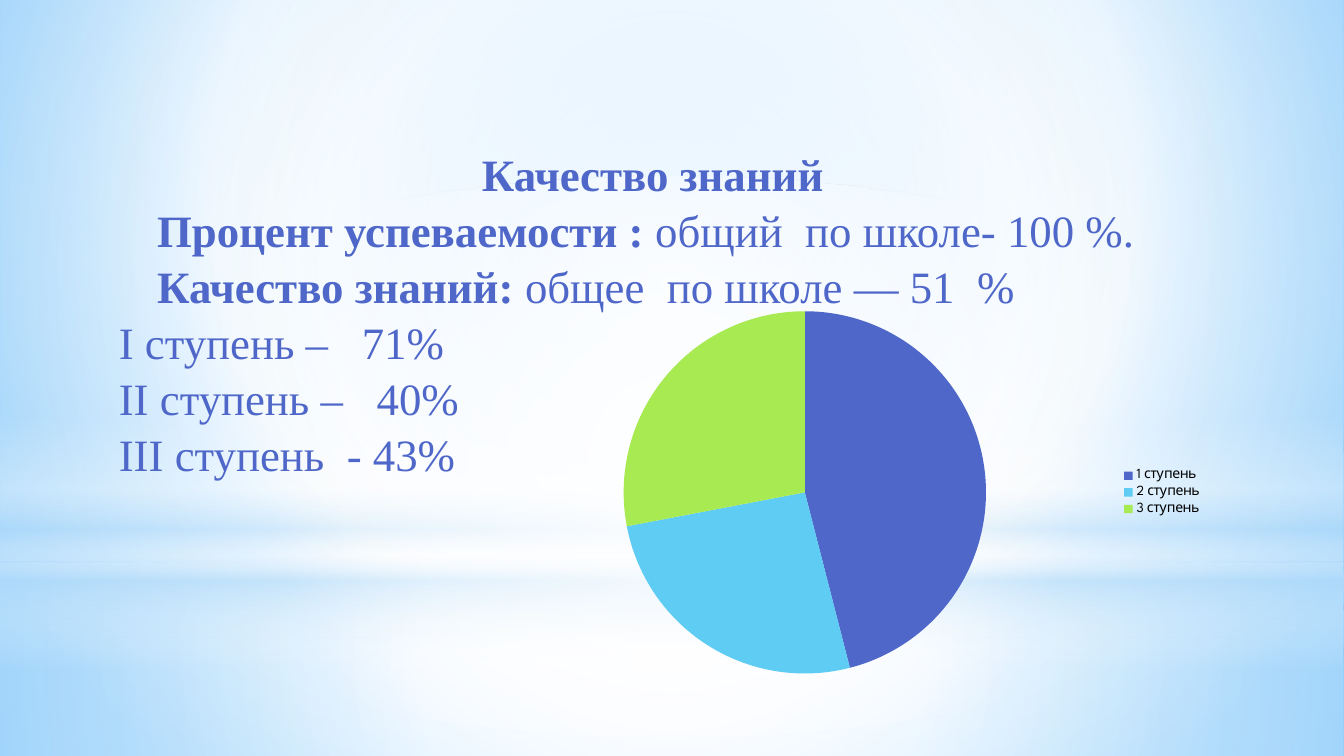
from lxml import etree
from pptx import Presentation
from pptx import util as u
from pptx.chart.data import CategoryChartData
from pptx.dml.color import RGBColor
from pptx.enum import chart as ch, shapes, text
from pptx.oxml.ns import qn

THEME = {
    "ink": "4E67C8", "black": "000000",
    "slices": ["4E67C8", "5ECCF3", "A7EA52"],
    "white": "FFFFFF", "mist": "B4DCFA", "sky": "9ED5FF", "deep": "5BB9FF",
    "face": "Times New Roman", "size": 32,
    "label": "League Spartan", "small": 10,
}

MID = (50, 50, 50, 50)
BACK = ([(0, "sky", 100), (60, "white", 100), (100, "deep", 100)], (20, 10, 20, 60))
RECT, OVAL = shapes.MSO_SHAPE.RECTANGLE, shapes.MSO_SHAPE.OVAL
GLOWS = [
    (RECT, 5.58, 1.92, [(0, "white", 91), (37, "white", 76), (100, "mist", 79)], MID),
    (RECT, 0, 5.58, [(0, "white", 89), (48, "white", 62), (100, "mist", 79)], MID),
    (RECT, 4.12, 2.5, [(0, "white", 0), (29, "white", 30), (45, "mist", 40),
                       (55, "white", 26), (65, "mist", 60), (100, "white", 0)], None),
    (OVAL, 1.75, 5.58, [(0, "white", 100), (56, "white", 0)], MID),
]

LEFT, MID_AL = text.PP_ALIGN.LEFT, text.PP_ALIGN.CENTER
LINES = [
    (MID_AL, 0, [("Качество знаний", True)]),
    (LEFT, 0.38, [("Процент успеваемости : ", True), ("общий  по школе- 100 %.\u00a0", False)]),
    (LEFT, 0.38, [("Качество знаний: ", True), ("общее  по школе — 51  %", False)]),
    (LEFT, 0, [("I ступень –   71%", False)]),
    (LEFT, 0, [("II ступень –   40%", False)]),
    (LEFT, 0, [("ІІІ ступень  - 43%", False)]),
]
SHARES = {"1 ступень": 46, "2 ступень": 26, "3 ступень": 28}
WIDE, HIGH = 13.33, 7.5


def box(*nums):
    return [u.Inches(n) for n in nums]


def shade(fill, root, stops, focus):
    fill.gradient()
    grad = next(root.iter(qn("a:gradFill")))
    for kid in list(grad):
        grad.remove(kid)
    group = etree.SubElement(grad, qn("a:gsLst"))
    for pos, name, alpha in stops:
        stop = etree.SubElement(group, qn("a:gs"), pos=str(pos * 1000))
        tone = etree.SubElement(stop, qn("a:srgbClr"), val=THEME[name])
        if alpha < 100:
            etree.SubElement(tone, qn("a:alpha"), val=str(alpha * 1000))
    if focus:
        way = etree.SubElement(grad, qn("a:path"), {"path": "circle"})
        sides = {k: str(v * 1000) for k, v in zip("ltrb", focus)}
        etree.SubElement(way, qn("a:fillToRect"), sides)
    else:
        etree.SubElement(grad, qn("a:lin"), ang=str(90 * 60000), scaled="0")


def add_glows(slide):
    shade(slide.background.fill, slide._element, *BACK)
    for kind, top, tall, stops, focus in GLOWS:
        glow = slide.shapes.add_shape(kind, *box(0, top, WIDE, tall))
        glow.shadow.inherit = False
        glow.line.fill.background()
        shade(glow.fill, glow._element, stops, focus)


def add_lines(slide):
    frame = slide.shapes.add_textbox(*box(1.08, 1.39, 10.79, 3.87)).text_frame
    frame.word_wrap = True
    for i, (align, inset, runs) in enumerate(LINES):
        para = frame.add_paragraph() if i else frame.paragraphs[0]
        para.alignment = align
        para.line_spacing = 1.04
        if inset:
            para._p.get_or_add_pPr().set("marL", str(u.Inches(inset)))
        for words, bold in runs:
            run = para.add_run()
            run.text = words
            font = run.font
            font.name, font.size, font.bold = THEME["face"], u.Pt(THEME["size"]), bold
            font.color.rgb = RGBColor.from_string(THEME["ink"])


def add_pie(slide):
    data = CategoryChartData()
    data.categories = list(SHARES)
    data.add_series("Series 1", list(SHARES.values()))
    pie = slide.shapes.add_chart(
        ch.XL_CHART_TYPE.PIE, *box(4.86, 2.95, 7.17, 3.87), data).chart
    pie.has_title = False
    pie.font.name, pie.font.size = THEME["label"], u.Pt(THEME["small"])
    pie.font.color.rgb = RGBColor.from_string(THEME["black"])
    pie.has_legend = True
    pie.legend.position = ch.XL_LEGEND_POSITION.RIGHT
    pie.legend.include_in_layout = False
    plot = pie.plots[0]
    plot.vary_by_categories = True
    for i, tone in enumerate(THEME["slices"]):
        fill = plot.series[0].points[i].format.fill
        fill.solid()
        fill.fore_color.rgb = RGBColor.from_string(tone)


def main():
    deck = Presentation()
    deck.slide_width, deck.slide_height = box(WIDE, HIGH)
    slide = deck.slides.add_slide(deck.slide_layouts[6])
    add_glows(slide)
    add_lines(slide)
    add_pie(slide)
    deck.save("out.pptx")


if __name__ == "__main__":
    main()
